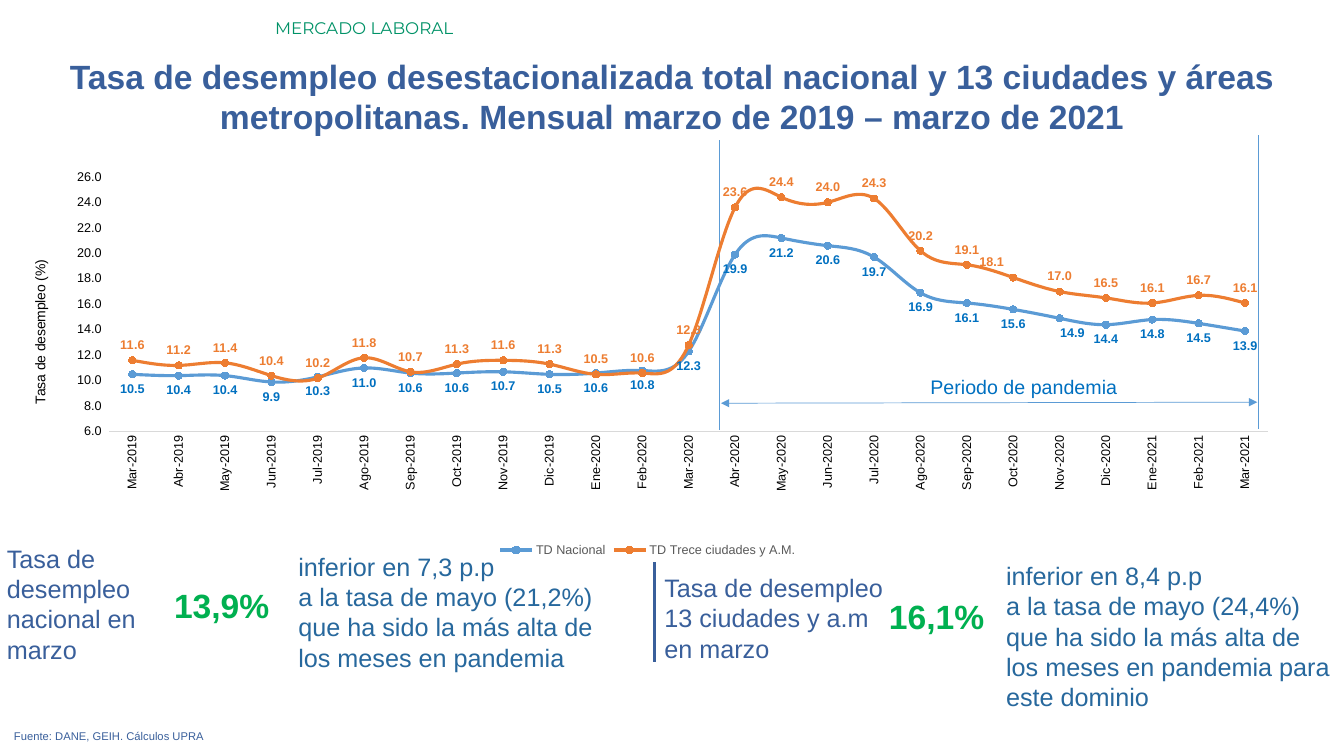
"""Build the slide on the seasonally adjusted unemployment rate."""
from pptx import Presentation
from pptx.chart.data import CategoryChartData
from pptx.dml.color import RGBColor
from pptx.enum.chart import (XL_CHART_TYPE, XL_LABEL_POSITION, XL_LEGEND_POSITION,
                             XL_MARKER_STYLE, XL_TICK_MARK)
from pptx.enum.shapes import MSO_CONNECTOR
from pptx.enum.text import MSO_ANCHOR, PP_ALIGN
from pptx.oxml import parse_xml
from pptx.oxml.ns import nsdecls, qn
from pptx.util import Inches, Pt

LEFT, CENTER, RIGHT, JUSTIFY = PP_ALIGN.LEFT, PP_ALIGN.CENTER, PP_ALIGN.RIGHT, PP_ALIGN.JUSTIFY
ABOVE, BELOW = XL_LABEL_POSITION.ABOVE, XL_LABEL_POSITION.BELOW
CIRCLE, NO_TICK = XL_MARKER_STYLE.CIRCLE, XL_TICK_MARK.NONE
COLORS = {"navy": "395F9B", "teal": "009267", "green": "00B050", "steel": "27689D",
          "blue": "0070C0", "sky": "5B9BD5", "orange": "ED7D31", "black": "000000",
          "gray": "595959", "axis": "D9D9D9"}
NUMBER_FORMAT = "#,##0.0"


def style_font(font, size, color, bold=False, name="Arial"):
    for attribute, value in {"size": Pt(size), "bold": bold, "name": name}.items():
        setattr(font, attribute, value)
    font.color.rgb = RGBColor.from_string(COLORS[color])


def set_layout(parent, index, tags):
    for old in parent.findall(qn("c:layout")):
        parent.remove(old)
    content = "".join(f'<c:{tag} val="{value}"/>' for tag, value in tags.items())
    parent.insert(index, parse_xml(
        f'<c:layout {nsdecls("c")}><c:manualLayout>{content}</c:manualLayout></c:layout>'))


presentation = Presentation()
presentation.slide_width = Inches(13.33)
presentation.slide_height = Inches(7.5)
slide = presentation.slides.add_slide(presentation.slide_layouts[5])

title = slide.shapes.title
title.left, title.top, title.width, title.height = (
    Inches(0), Inches(0.5), Inches(13.33), Inches(0.91))
title.text_frame.text = ("Tasa de desempleo desestacionalizada total nacional y 13 ciudades y áreas "
                         "metropolitanas. Mensual marzo de 2019 – marzo de 2021")
title.text_frame.vertical_anchor = MSO_ANCHOR.TOP
title.text_frame.paragraphs[0].alignment = CENTER
style_font(title.text_frame.paragraphs[0].font, 24, "navy", True)

texts = [
    ((2.63, 0.13, 10.7, 0.3), ["MERCADO LABORAL"], LEFT, (12, "teal", False, "Montserrat")),
    ((0.04, 7.19, 12.91, 0.24), ["Fuente: DANE, GEIH. Cálculos UPRA"], JUSTIFY, (8, "navy")),
    ((-0.03, 5.34, 2.22, 1.31), ["Tasa de desempleo nacional en", "marzo"], LEFT, (18, "navy")),
    ((1.61, 5.75, 1.16, 0.5), ["13,9%"], RIGHT, (24, "green", True)),
    ((2.86, 5.42, 3.45, 1.31),
     ["inferior en 7,3 p.p",
      "a la tasa de mayo (21,2%) que ha sido la más alta de los meses en pandemia"],
     LEFT, (18, "steel")),
    ((6.49, 5.63, 2.45, 1.31), ["Tasa de desempleo", "13 ciudades y a.m en marzo"],
     LEFT, (18, "navy")),
    ((8.41, 5.86, 1.45, 0.5), ["16,1%"], RIGHT, (24, "green", True)),
    ((9.88, 5.51, 3.45, 1.62),
     ["inferior en 8,4 p.p",
      "a la tasa de mayo (24,4%) que ha sido la más alta de los meses en pandemia "
      "para este dominio"],
     LEFT, (18, "steel")),
    ((9.13, 3.67, 2.63, 0.34), ["Periodo de pandemia"], LEFT, (14, "blue")),
]
for box, lines, alignment, font_style in texts:
    text_frame = slide.shapes.add_textbox(*map(Inches, box)).text_frame
    text_frame.word_wrap = True
    text_frame.text = "\n".join(lines)
    for paragraph in text_frame.paragraphs:
        paragraph.alignment = alignment
        style_font(paragraph.font, *font_style)

connectors = [
    ((6.49, 5.58, 6.49, 6.57), "navy", 2.25, False),
    ((7.13, 1.39, 7.13, 4.27), "sky", 0.5, False),
    ((12.48, 1.34, 12.48, 4.26), "sky", 0.5, False),
    ((7.15, 4, 12.47, 3.99), "sky", 0.5, True),
]
for ends, color, width, has_arrows in connectors:
    connector = slide.shapes.add_connector(MSO_CONNECTOR.STRAIGHT, *map(Inches, ends))
    connector.line.color.rgb = RGBColor.from_string(COLORS[color])
    connector.line.width = Pt(width)
    properties = connector._element.spPr
    properties.append(parse_xml(f'<a:effectLst {nsdecls("a")}/>'))
    if has_arrows:
        for tag in ("headEnd", "tailEnd"):
            properties.find(qn("a:ln")).append(
                parse_xml(f'<a:{tag} {nsdecls("a")} type="triangle"/>'))

months = ["Ene", "Feb", "Mar", "Abr", "May", "Jun", "Jul", "Ago", "Sep", "Oct", "Nov", "Dic"]
chart_data = CategoryChartData(number_format=NUMBER_FORMAT)
chart_data.categories = [f"{months[i % 12]}-{2019 + i // 12}" for i in range(2, 27)]
chart_data.add_series("TD Nacional", [
    10.5, 10.4, 10.4, 9.9, 10.3, 11, 10.6, 10.6, 10.7, 10.5, 10.6, 10.8, 12.3,
    19.9, 21.2, 20.6, 19.7, 16.9, 16.1, 15.6, 14.9, 14.4, 14.8, 14.5, 13.9])
chart_data.add_series("TD Trece ciudades y A.M.", [
    11.6, 11.2, 11.4, 10.4, 10.2, 11.8, 10.7, 11.3, 11.6, 11.3, 10.5, 10.6, 12.8,
    23.6, 24.4, 24, 24.3, 20.2, 19.1, 18.1, 17, 16.5, 16.1, 16.7, 16.1])
chart = slide.shapes.add_chart(XL_CHART_TYPE.LINE_MARKERS, Inches(0.08), Inches(1.55),
                               Inches(12.69), Inches(4.02), chart_data).chart
style_font(chart.font, 10, "black")
chart.has_title = False
chart.has_legend = True
chart.legend.position = XL_LEGEND_POSITION.BOTTOM
chart.legend.include_in_layout = False
style_font(chart.legend.font, 9, "gray")

chart_space = chart._chartSpace
plot_area = chart_space.find(".//" + qn("c:plotArea"))
set_layout(plot_area, 0, {"layoutTarget": "inner", "xMode": "edge", "yMode": "edge",
                          "x": 0.079, "y": 0.051, "w": 0.906, "h": 0.629})
no_fill = f'<c:spPr {nsdecls("c", "a")}><a:noFill/><a:ln><a:noFill/></a:ln></c:spPr>'
plot_area.append(parse_xml(no_fill))
chart_space.find(qn("c:chart")).addnext(parse_xml(no_fill))

category_axis, value_axis = chart.category_axis, chart.value_axis
for axis in (category_axis, value_axis):
    axis.has_major_gridlines = False
    axis.major_tick_mark = axis.minor_tick_mark = NO_TICK
    style_font(axis.tick_labels.font, 9, "black")
category_axis.format.line.color.rgb = RGBColor.from_string(COLORS["axis"])
category_axis.format.line.width = Pt(0.75)
category_axis._element.find(".//" + qn("a:bodyPr")).set("rot", "-5400000")

for attribute, value in {"minimum_scale": 6, "maximum_scale": 26, "major_unit": 2}.items():
    setattr(value_axis, attribute, value)
value_axis.format.line.fill.background()
value_axis.tick_labels.number_format = NUMBER_FORMAT + "_-"
value_axis.tick_labels.number_format_is_linked = False
axis_title = value_axis.axis_title
axis_title.text_frame.text = "Tasa de desempleo (%)"
style_font(axis_title.text_frame.paragraphs[0].font, 10, "black")
set_layout(axis_title._element, 1, {"xMode": "edge", "yMode": "edge", "x": 0.016, "y": 0.25})

series_styles = [("sky", "blue", BELOW, 20, 0.01), ("orange", "orange", ABOVE, 19, -0.017)]
for series, (color, label_color, position, moved_point, shift) in zip(
        chart.plots[0].series, series_styles):
    rgb = RGBColor.from_string(COLORS[color])
    series.smooth = True
    series.format.line.color.rgb = rgb
    series.format.line.width = Pt(2.25)
    series.marker.style = CIRCLE
    series.marker.size = 5
    series.marker.format.fill.solid()
    series.marker.format.fill.fore_color.rgb = rgb
    series.marker.format.line.color.rgb = rgb
    labels = series.data_labels
    labels.show_value = True
    labels.number_format = NUMBER_FORMAT
    labels.number_format_is_linked = False
    moved_label = series.points[moved_point].data_label
    for label in (labels, moved_label):
        label.position = position
        style_font(label.font, 9, label_color, True)
    set_layout(series._element.find(".//" + qn("c:dLbl")), 1, {"x": shift, "y": 0})

presentation.save("out.pptx")
